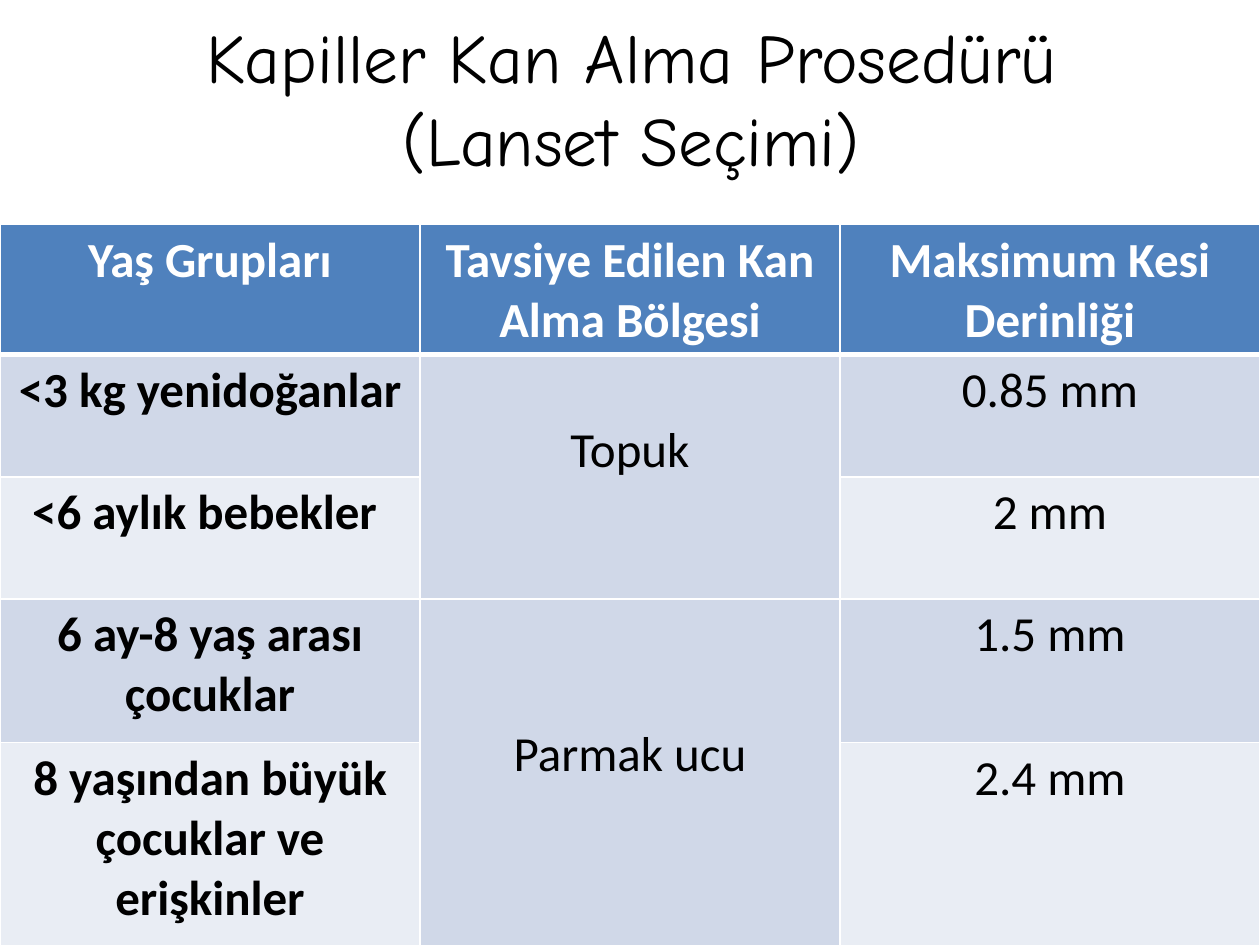
from lxml.etree import SubElement
from pptx import Presentation
from pptx.dml.color import RGBColor
from pptx.enum.text import MSO_ANCHOR as Anchor, PP_ALIGN as Align
from pptx.oxml.ns import qn
from pptx.util import Inches, Pt

COLORS = {"ink": "000000", "white": "FFFFFF", "header": "4F81BD",
          "odd": "D0D8E8", "even": "E9EDF4"}
LINE_HEIGHT = 0.475  # one 28 pt line, in inches


def write(frame, text, size=28, font="Calibri", color="ink", bold=False):
    frame.word_wrap = True
    frame.text = text
    paragraph = frame.paragraphs[0]
    paragraph.alignment = Align.CENTER
    for run in paragraph.runs:
        run.font.size = Pt(size)
        run.font.name = font
        run.font.bold = bold
        run.font.color.rgb = RGBColor.from_string(COLORS[color])


def style_cell(cell, fill, bottom_width):
    """Set white borders and a solid fill; the borders must come first in the XML."""
    properties = cell._tc.get_or_add_tcPr()
    for side, width in (("L", 1), ("R", 1), ("T", 1), ("B", bottom_width)):
        border = SubElement(properties, qn(f"a:ln{side}"), w=str(Pt(width)))
        solid = SubElement(border, qn("a:solidFill"))
        SubElement(solid, qn("a:srgbClr"), val=COLORS["white"])
    cell.fill.solid()
    cell.fill.fore_color.rgb = RGBColor.from_string(COLORS[fill])


prs = Presentation()
prs.slide_width, prs.slide_height = Inches(10), Inches(7.5)
slide = prs.slides.add_slide(prs.slide_layouts[6])

title = slide.shapes.add_textbox(Inches(0.51), Inches(0), Inches(9), Inches(1.55))
title.text_frame.vertical_anchor = Anchor.MIDDLE
write(title.text_frame, "Kapiller Kan Alma Prosedürü\v(Lanset Seçimi)",
      size=39.6, font="Comic Neue")

rows = [
    ("Yaş Grupları", "Tavsiye Edilen Kan Alma Bölgesi", "Maksimum Kesi Derinliği"),
    ("<3 kg yenidoğanlar", "Topuk", "0.85 mm"),
    ("<6 aylık bebekler ", "", "2 mm"),
    ("6 ay-8 yaş arası çocuklar", "Parmak ucu", "1.5 mm"),
    ("8 yaşından büyük çocuklar ve erişkinler", "", "2.4 mm"),
]
row_heights = [0.99, 0.97, 0.97, 1.14, 1.65]
lancets = slide.shapes.add_table(len(rows), 3, Inches(0), Inches(1.78),
                                 Inches(10), Inches(sum(row_heights))).table

for r, (texts, height) in enumerate(zip(rows, row_heights)):
    lancets.rows[r].height = Inches(height)
    header = r == 0
    fill = "header" if header else "odd" if r % 2 else "even"
    for c, text in enumerate(texts):
        cell = lancets.cell(r, c)
        style_cell(cell, fill, bottom_width=3 if header else 1)
        if text:
            write(cell.text_frame, text, color="white" if header else "ink",
                  bold=header or c == 0)

# Each sampling site covers two age groups and starts some lines down.
for first_row, lines_down in ((1, 1), (3, 2)):
    site = lancets.cell(first_row, 1)
    site.merge(lancets.cell(first_row + 1, 1))
    site.margin_top = Inches(0.05 + lines_down * LINE_HEIGHT)

prs.save("out.pptx")
